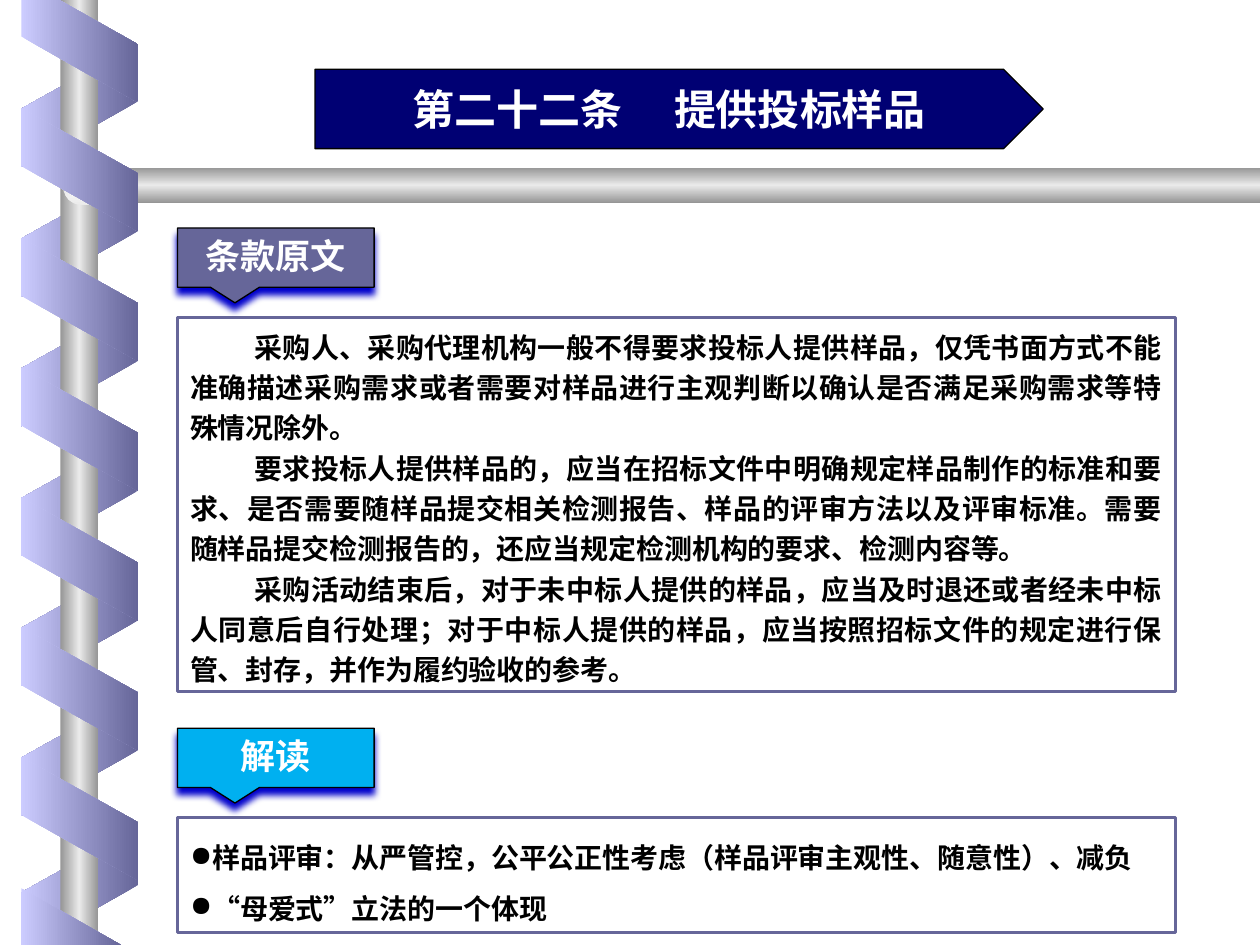
import pptx
import pptx.dml.color
import pptx.enum.shapes
import pptx.enum.text
import pptx.oxml
import pptx.oxml.ns
import pptx.util

Inches = pptx.util.Inches
Pt = pptx.util.Pt
RGBColor = pptx.dml.color.RGBColor
SHAPE = pptx.enum.shapes.MSO_SHAPE
ALIGN = pptx.enum.text.PP_ALIGN
ANCHOR = pptx.enum.text.MSO_ANCHOR
AUTO_SIZE = pptx.enum.text.MSO_AUTO_SIZE
qn = pptx.oxml.ns.qn

SLATE = RGBColor(0x66, 0x66, 0x99)
LILAC = RGBColor(0xCC, 0xCC, 0xFF)
STEEL = RGBColor(0x96, 0x96, 0x96)
SILVER = RGBColor(0xEA, 0xEA, 0xEA)
PEARL = RGBColor(0xFE, 0xFF, 0xFF)
NAVY = RGBColor(0x00, 0x00, 0x73)
SKY = RGBColor(0x00, 0xB0, 0xF0)
SHADOW_BLUE = RGBColor(0x00, 0x00, 0xCC)
BLACK = RGBColor(0x00, 0x00, 0x00)
WHITE = RGBColor(0xFF, 0xFF, 0xFF)

CJK_FONT = "Noto Sans CJK SC"
LATIN_FONT = "Times New Roman"
LINEAR = '<a:lin ang="{}" scaled="0"/>'
RADIAL = '<a:path path="shape"><a:fillToRect l="50000" t="50000" r="50000" b="50000"/></a:path>'

CLAUSES = [
    "采购人、采购代理机构一般不得要求投标人提供样品，仅凭书面方式不能准确描述采购需求或者需要对样品进行主观判断以确认是否满足采购需求等特殊情况除外。",
    "要求投标人提供样品的，应当在招标文件中明确规定样品制作的标准和要求、是否需要随样品提交相关检测报告、样品的评审方法以及评审标准。需要随样品提交检测报告的，还应当规定检测机构的要求、检测内容等。",
    "采购活动结束后，对于未中标人提供的样品，应当及时退还或者经未中标人同意后自行处理；对于中标人提供的样品，应当按照招标文件的规定进行保管、封存，并作为履约验收的参考。",
]
COMMENTS = [
    "样品评审：从严管控，公平公正性考虑（样品评审主观性、随意性）、减负",
    "“母爱式”立法的一个体现",
]


def apply_format(target, values):
    for name, value in values.items():
        setattr(target, name, value)


def xml_element(tag, content):
    return pptx.oxml.parse_xml(f"<a:{tag} {pptx.oxml.ns.nsdecls('a')} {content}")


def add_shape(slide, kind, box, adjustments=()):
    shape = slide.shapes.add_shape(kind, *map(Inches, box))
    shape.shadow.inherit = False
    shape.line.fill.background()
    for index, value in enumerate(adjustments):
        shape.adjustments[index] = value
    return shape


def fill_gradient(shape, colors, direction):
    last = len(colors) - 1
    stops = "".join(
        f'<a:gs pos="{100000 * index // last}"><a:srgbClr val="{color}"/></a:gs>'
        for index, color in enumerate(colors)
    )
    gradient = xml_element(
        "gradFill", f'rotWithShape="0"><a:gsLst>{stops}</a:gsLst>{direction}</a:gradFill>'
    )
    shape.fill.background()
    properties = shape._element.spPr
    properties.replace(properties.find(qn("a:noFill")), gradient)


def fill_solid(shape, color):
    shape.fill.solid()
    shape.fill.fore_color.rgb = color


def set_line(shape, color, width):
    shape.line.color.rgb = color
    shape.line.width = Pt(width)


def add_run(paragraph, text, size, color, font=LATIN_FONT):
    run = paragraph.add_run()
    run.text = text
    apply_format(run.font, {"size": Pt(size), "bold": True, "name": font})
    run.font.color.rgb = color
    run._r.get_or_add_rPr().find(qn("a:latin")).addnext(
        xml_element("ea", f'typeface="{CJK_FONT}"/>')
    )
    return run


def add_ribbon(slide, box, colors, format_values, flipped=False):
    ribbon = add_shape(slide, SHAPE.PARALLELOGRAM, box, [0.56])
    apply_format(ribbon, format_values)
    if flipped:
        ribbon._element.spPr.xfrm.set("flipH", "1")
    fill_gradient(ribbon, colors, LINEAR.format(0))


def add_ribbon_end(slide, left, top, points):
    corners = [(Inches(left + x), Inches(top + y)) for x, y in points]
    builder = slide.shapes.build_freeform(*corners[0], scale=1.0)
    builder.add_line_segments(corners[1:], close=True)
    ribbon_end = builder.convert_to_shape()
    ribbon_end.shadow.inherit = False
    ribbon_end.line.fill.background()
    fill_gradient(ribbon_end, [LILAC, SLATE], LINEAR.format(0))


def add_spiral(slide, left, top, width, height):
    pitch = 1.03
    back_tops = [0.37 + pitch * index for index in range(6)] + [6.59]
    front_tops = [0.88 + pitch * index for index in range(6)]
    metal = [STEEL, SILVER, STEEL]

    for offset in back_tops:
        add_ribbon(slide, (left, top + offset, 0.98, 0.93), [SLATE, LILAC], {"rotation": 90}, True)

    pole = add_shape(slide, SHAPE.RECTANGLE, (left + 0.34, top, 0.3, height))
    fill_gradient(pole, metal, LINEAR.format(0))

    bar = add_shape(slide, SHAPE.PENTAGON, (left + 0.46, top + 1.33, width - 0.46, 0.28), [0.59])
    bar._element.spPr.xfrm.set("flipH", "1")
    fill_gradient(bar, metal, LINEAR.format(5400000))

    joint = add_shape(slide, SHAPE.OVAL, (left + 0.36, top + 1.33, 0.32, 0.3))
    fill_gradient(joint, [PEARL, SILVER], RADIAL)

    for offset in front_tops:
        add_ribbon(slide, (left, top + offset, 0.98, 0.93), [LILAC, SLATE], {"rotation": 270})

    add_ribbon_end(
        slide, left, top, [(0.03, 0), (0.03, 0.29), (0.95, 0.81), (0.95, 0.35), (0.33, 0)]
    )
    add_ribbon_end(slide, left, top + height, [(0.82, 0), (0.03, -0.45), (0.03, 0)])


def add_title(slide, left, top, width, height):
    banner = add_shape(slide, SHAPE.PENTAGON, (left, top, width, height))
    fill_solid(banner, NAVY)
    set_line(banner, BLACK, 0.75)
    banner.text_frame.vertical_anchor = ANCHOR.MIDDLE
    paragraph = banner.text_frame.paragraphs[0]
    paragraph.alignment = ALIGN.CENTER
    add_run(paragraph, "第二十二条", 24, WHITE)
    gap = add_run(paragraph, " ", 24, WHITE)
    gap._r.get_or_add_rPr().set("spc", "2400")
    add_run(paragraph, "提供投标样品", 24, WHITE)


def add_label(slide, left, top, text, color):
    label = add_shape(
        slide, SHAPE.RECTANGULAR_CALLOUT, (left, top, 1.56, 0.47), [-0.208, 0.764]
    )
    fill_solid(label, color)
    set_line(label, BLACK, 0.75)
    label._element.spPr.find(qn("a:effectLst")).append(
        xml_element(
            "outerShdw",
            f'blurRad="{Pt(4)}" dist="{Pt(4)}" dir="5400000" algn="ctr" rotWithShape="0">'
            f'<a:srgbClr val="{SHADOW_BLUE}"/></a:outerShdw>',
        )
    )
    label.text_frame.vertical_anchor = ANCHOR.TOP
    paragraph = label.text_frame.paragraphs[0]
    paragraph.alignment = ALIGN.CENTER
    add_run(paragraph, text, 20, WHITE)


def add_text_panel(slide, left, top, width, height, texts, indent, spacing, bullet=None):
    panel = add_shape(slide, SHAPE.RECTANGLE, (left, top, width, height))
    panel.fill.background()
    set_line(panel, SLATE, 1.5)
    frame = panel.text_frame
    apply_format(
        frame,
        {"word_wrap": True, "vertical_anchor": ANCHOR.TOP, "auto_size": AUTO_SIZE.SHAPE_TO_FIT_TEXT},
    )
    for index, text in enumerate(texts):
        paragraph = frame.add_paragraph() if index else frame.paragraphs[0]
        apply_format(paragraph, {"alignment": ALIGN.JUSTIFY, "line_spacing": spacing})
        properties = paragraph._p.get_or_add_pPr()
        properties.set("marL", "0")
        properties.set("indent", str(Inches(indent)))
        if bullet:
            properties.append(xml_element("buChar", f'char="{bullet}"/>'))
        add_run(paragraph, text, 16, BLACK, CJK_FONT)


def main():
    presentation = pptx.Presentation()
    apply_format(presentation, {"slide_width": Inches(10), "slide_height": Inches(7.5)})
    slide = presentation.slides.add_slide(presentation.slide_layouts[6])
    add_spiral(slide, 0.14, 0, 9.86, 7.5)
    add_text_panel(slide, 1.41, 2.52, 7.92, 2.97, CLAUSES, 0.51, 1.2)
    add_title(slide, 2.5, 0.55, 5.78, 0.63)
    add_label(slide, 1.41, 1.81, "条款原文", SLATE)
    add_label(slide, 1.41, 5.78, "解读", SKY)
    add_text_panel(slide, 1.41, 6.49, 7.92, 0.91, COMMENTS, -0.31, 1.5, "●")
    presentation.save("out.pptx")


if __name__ == "__main__":
    main()
